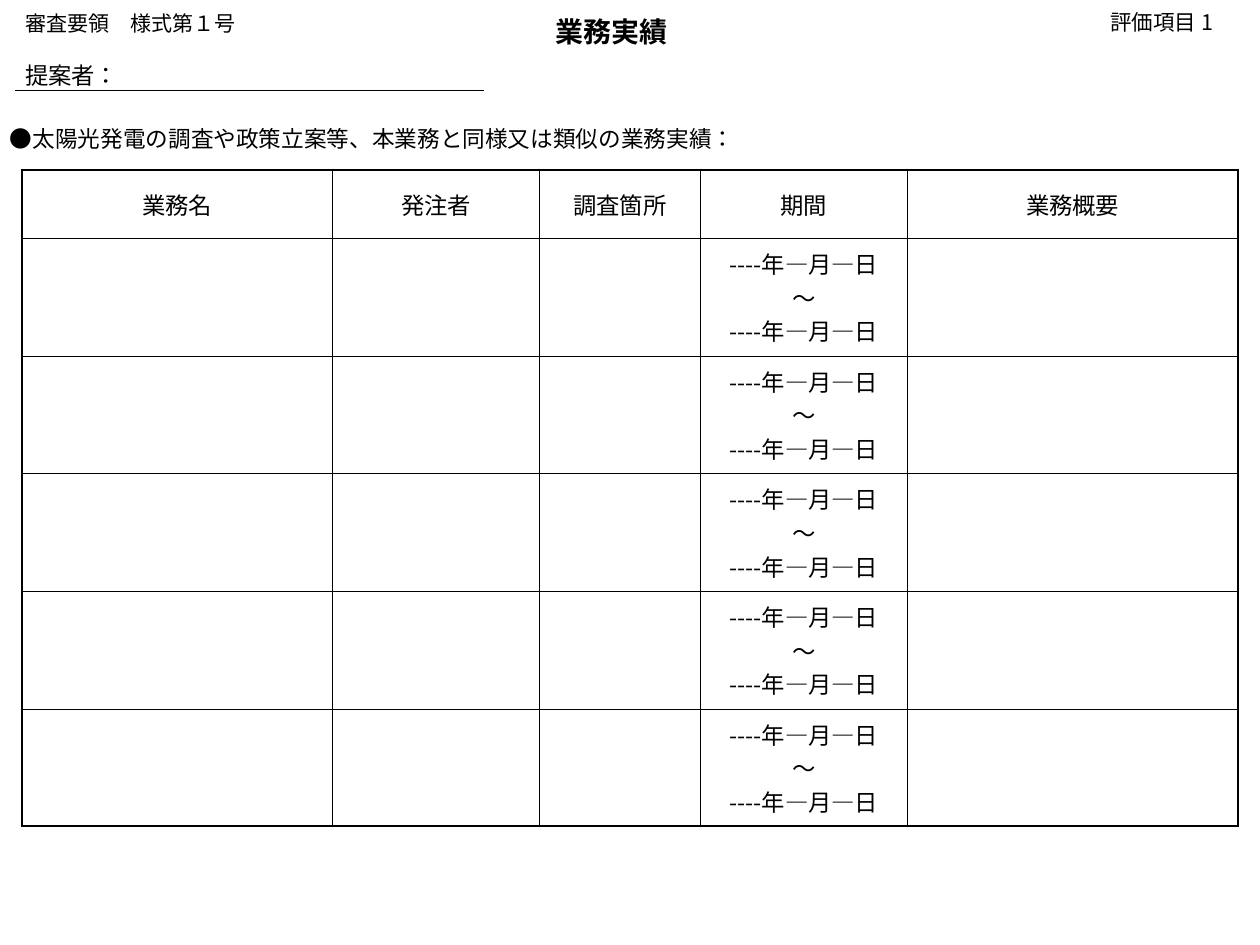
import pptx
import pptx.util
import pptx.dml.color
import pptx.enum.lang
import pptx.enum.shapes
import pptx.enum.text
import pptx.oxml
import pptx.oxml.ns

Inches = pptx.util.Inches
Pt = pptx.util.Pt
ALIGN = pptx.enum.text.PP_ALIGN
ANCHOR = pptx.enum.text.MSO_ANCHOR
BLACK = pptx.dml.color.RGBColor(0, 0, 0)
FONT = "Noto Sans CJK JP"
THIN, THICK = Pt(0.25), Pt(1)


def write(para, text, size, align, bold=False):
    para.alignment = align
    span = para.add_run()
    span.text = text
    span.font.name = FONT
    span.font.size = Pt(size)
    span.font.bold = bold
    span.font.color.rgb = BLACK
    span.font.language_id = pptx.enum.lang.MSO_LANGUAGE_ID.JAPANESE
    east_asian = pptx.oxml.parse_xml(
        f'<a:ea {pptx.oxml.ns.nsdecls("a")} typeface="{FONT}"/>')
    span.font._element.find(pptx.oxml.ns.qn("a:latin")).addnext(east_asian)


def border(cell, widths):
    cell.fill.background()
    for index, (side, width) in enumerate(zip("LRTB", widths)):
        line = pptx.oxml.parse_xml(
            f'<a:ln{side} {pptx.oxml.ns.nsdecls("a")} w="{width}">'
            f'<a:solidFill><a:srgbClr val="{BLACK}"/></a:solidFill></a:ln{side}>')
        cell._tc.tcPr.insert(index, line)


deck = pptx.Presentation()
deck.slide_width = Inches(7.5)
deck.slide_height = Inches(7.5 * 3 / 4)
page = deck.slides.add_slide(deck.slide_layouts[5])

title = page.shapes.title
title.left, title.top = Inches(2.79), Inches(0.04)
title.width, title.height = Inches(1.7), Inches(0.32)
title.text_frame.vertical_anchor = ANCHOR.MIDDLE
heading = title.text_frame.paragraphs[0]
heading.line_spacing = 0.9
heading.space_before = Pt(7.5)
write(heading, "業務実績", 12, ALIGN.CENTER, bold=True)

labels = [
    ("●太陽光発電の調査や政策立案等、本業務と同様又は類似の業務実績：",
     0, 0.7, 4.64, 0.32, 9.7, 1.1, 10, ALIGN.LEFT, ANCHOR.TOP),
    ("審査要領　様式第１号",
     0.09, 0.03, 1.78, 0.23, 9, 0.9, 10, ALIGN.LEFT, ANCHOR.MIDDLE),
    ("提案者：",
     0.09, 0.3, 2.87, 0.32, 10, 0.9, 10, ALIGN.LEFT, ANCHOR.MIDDLE),
    ("評価項目 1",
     6.35, 0.03, 1.13, 0.23, 9.2, 0.8, 7.5, ALIGN.CENTER, ANCHOR.MIDDLE),
]
for text, left, top, width, height, size, spacing, before, align, anchor in labels:
    box = page.shapes.add_textbox(
        Inches(left), Inches(top), Inches(width), Inches(height))
    frame = box.text_frame
    frame.word_wrap = True
    frame.vertical_anchor = anchor
    frame.margin_left = frame.margin_right = Inches(0.06)
    frame.margin_top = frame.margin_bottom = Inches(0.03)
    para = frame.paragraphs[0]
    para.line_spacing = spacing
    para.space_before = Pt(before)
    write(para, text, size, align)

proposer_line = page.shapes.add_connector(
    pptx.enum.shapes.MSO_CONNECTOR.STRAIGHT,
    Inches(0.09), Inches(0.54), Inches(2.88), Inches(0.54))
proposer_line.line.color.rgb = BLACK
proposer_line.line.width = Pt(0.5)
proposer_line._element.spPr.append(
    pptx.oxml.parse_xml(f'<a:effectLst {pptx.oxml.ns.nsdecls("a")}/>'))

headers = ["業務名", "発注者", "調査箇所", "期間", "業務概要"]
column_widths = [1.85, 1.23, 0.96, 1.23, 1.97]
row_heights = [0.41] + [0.7] * 5
period = ["----年—月—日", "～", "----年—月—日"]
last_row, last_column = len(row_heights) - 1, len(headers) - 1

table = page.shapes.add_table(
    len(row_heights), len(headers), Inches(0.13), Inches(1.01),
    Inches(sum(column_widths)), Inches(sum(row_heights))).table
table.first_row = False
table.horz_banding = False
for column, width in zip(table.columns, column_widths):
    column.width = Inches(width)

for r, height in enumerate(row_heights):
    table.rows[r].height = Inches(height)
    for c, header in enumerate(headers):
        cell = table.cell(r, c)
        cell.vertical_anchor = ANCHOR.MIDDLE
        border(cell, [
            THICK if c == 0 else THIN,
            THICK if c == last_column else THIN,
            THICK if r <= 1 else THIN,
            THICK if r in (0, last_row) else THIN,
        ])
        if r == 0:
            lines = [header]
        elif header == "期間":
            lines = period
        else:
            lines = []
        for i, text in enumerate(lines):
            frame = cell.text_frame
            para = frame.add_paragraph() if i else frame.paragraphs[0]
            write(para, text, 10, ALIGN.CENTER)

deck.save("out.pptx")
